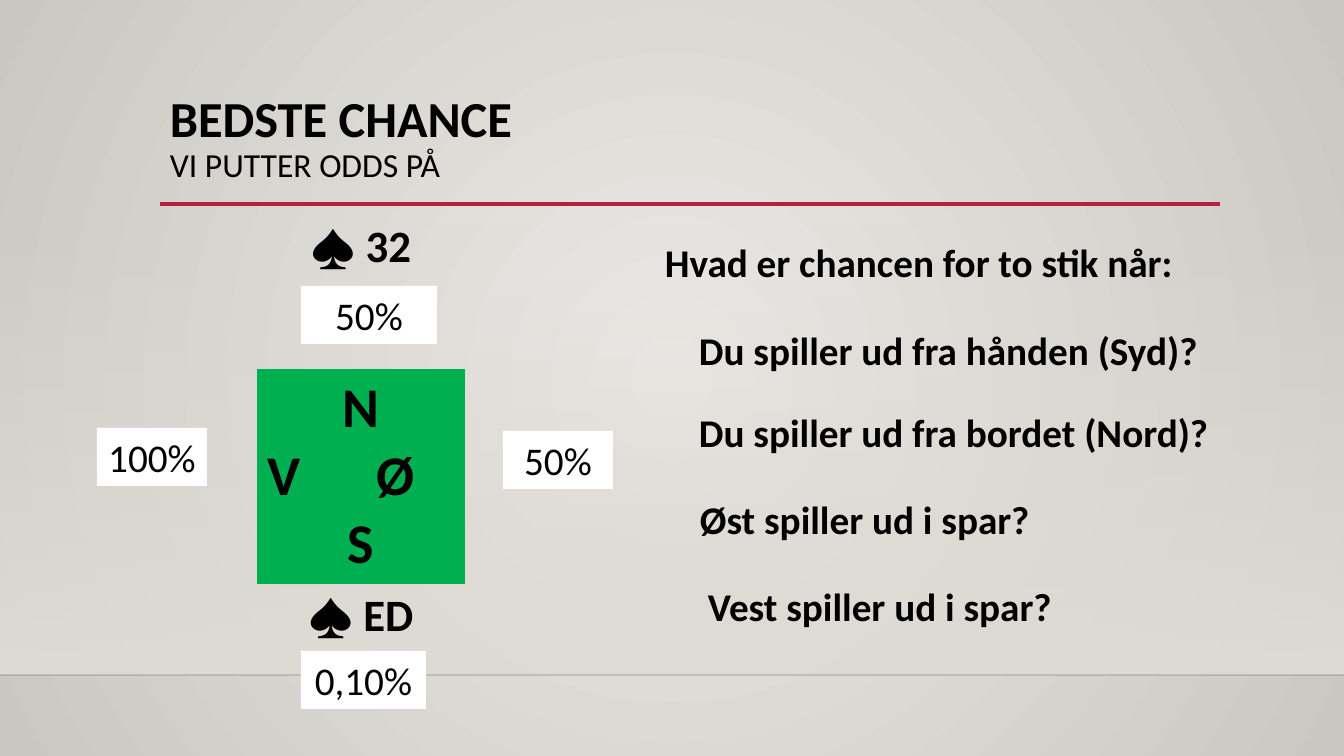
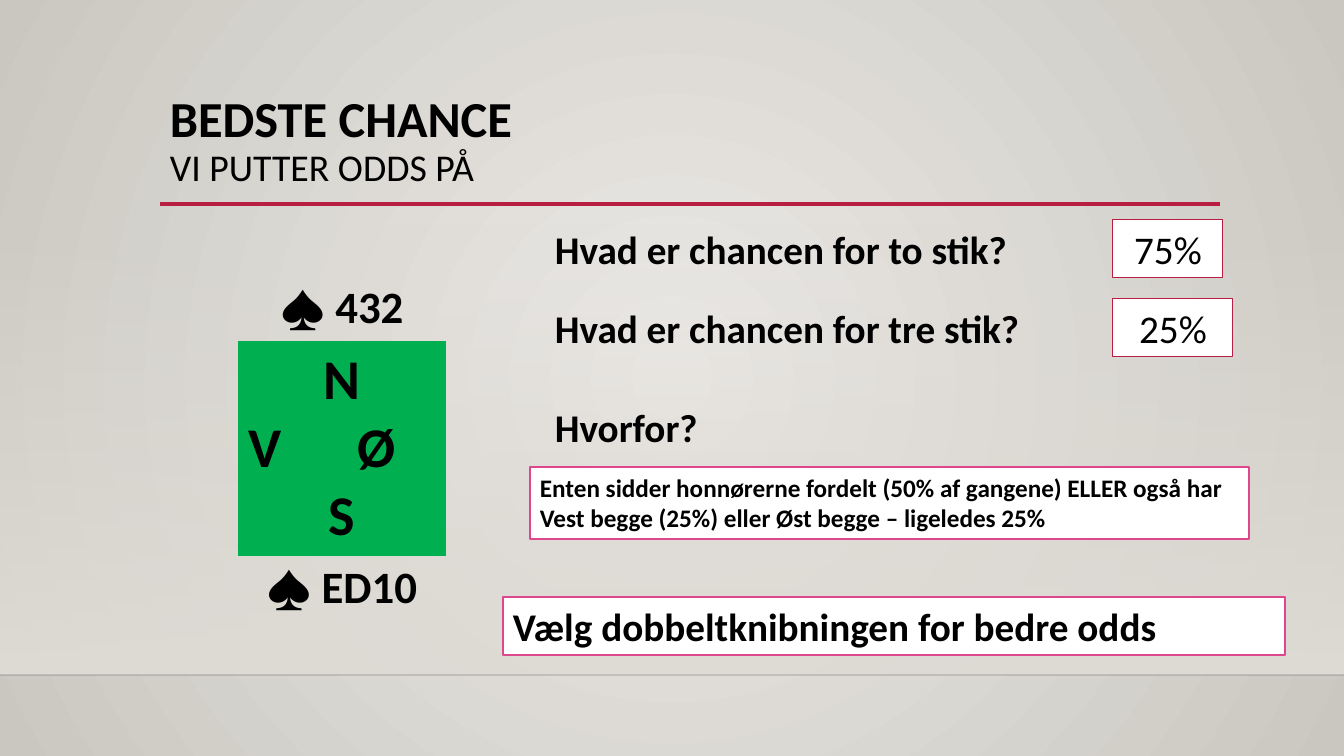
from dataclasses import dataclass
from typing import Optional

import pptx
import pptx.dml.color
import pptx.enum.shapes
import pptx.enum.text
import pptx.oxml
import pptx.oxml.ns
import pptx.util

PX = 914400 / 100.8  # EMU in one px
SLIDE_W, SLIDE_H = 1344, 756
BOX_H = 58
NO_STYLE_TABLE = "{2D5ABB26-0587-4C30-8999-92F81FD0307C}"

MSO = pptx.enum.shapes
ANCHOR = pptx.enum.text.MSO_ANCHOR
ALIGN = pptx.enum.text.PP_ALIGN
qn = pptx.oxml.ns.qn


@dataclass(frozen=True)
class Theme:
    font: str = "Calibri"
    ink: str = "000000"
    white: str = "FFFFFF"
    table_green: str = "00B050"
    red: str = "B71E42"
    pink: str = "DE478E"
    floor: str = "DFDBD5"
    floor_line: str = "000001"
    light: str = "ECEAE7"
    dark: str = "CAC7C1"
    title: int = 36
    body: int = 28
    note: int = 18
    seat: int = 40
    cards: int = 32


T = Theme()


@dataclass(frozen=True)
class Style:
    size: int = T.body
    bold: bool = True
    centred: bool = False
    fill: Optional[str] = None
    line: Optional[str] = None
    line_pt: float = 0.75


QUESTION = Style()
ANSWER = Style(bold=False, centred=True, fill=T.white)
FRAMED_ANSWER = Style(bold=False, centred=True, fill=T.white, line=T.red)
CONCLUSION = Style(fill=T.white, line=T.pink, line_pt=1.25)
EXPLANATION = Style(size=T.note, fill=T.white, line=T.pink, line_pt=1.25)


@dataclass(frozen=True)
class Box:
    text: str
    x: int
    y: int
    w: int
    style: Style
    h: int = BOX_H


@dataclass(frozen=True)
class Deal:
    north: str
    south: str
    x: int
    y: int
    north_h: int
    north_anchor: ANCHOR


@dataclass(frozen=True)
class Page:
    subtitle_size: int
    deal: Deal
    boxes: tuple[Box, ...]


PAGES = (
    Page(24, Deal("32", "ED", 46, 215, 154, ANCHOR.TOP), (
        Box("Hvad er chancen for to stik når:", 655, 233, 604, QUESTION),
        Box("Du spiller ud fra hånden (Syd)?", 689, 321, 604, QUESTION),
        Box("Du spiller ud fra bordet (Nord)?", 689, 403, 604, QUESTION),
        Box("Øst spiller ud i spar?", 690, 490, 568, QUESTION),
        Box("Vest spiller ud i spar?", 698, 577, 568, QUESTION),
        Box("0,10%", 301, 651, 125, ANSWER),
        Box("100%", 97, 428, 110, ANSWER),
        Box("50%", 503, 431, 110, ANSWER),
        Box("50%", 301, 286, 136, ANSWER),
    )),
    Page(27, Deal("432", "ED10", 27, 222, 119, ANCHOR.BOTTOM), (
        Box("Hvad er chancen for to stik?", 545, 220, 533, QUESTION),
        Box("Hvad er chancen for tre stik?", 545, 299, 547, QUESTION),
        Box("Hvorfor?", 545, 398, 199, QUESTION),
        Box("75%", 1113, 220, 110, FRAMED_ANSWER),
        Box("25%", 1113, 299, 120, FRAMED_ANSWER),
        Box("Enten sidder honnørerne fordelt (50% af gangene) ELLER også har "
            "Vest begge (25%) eller Øst begge – ligeledes 25%",
            530, 467, 719, EXPLANATION, 72),
        Box("Vælg dobbeltknibningen for bedre odds", 503, 597, 782, CONCLUSION),
    )),
)


def px(n: int) -> pptx.util.Emu:
    return pptx.util.Emu(round(n * PX))


def rgb(colour: str) -> pptx.dml.color.RGBColor:
    return pptx.dml.color.RGBColor.from_string(colour)


def add_run(p, text: str, size: int, bold: bool) -> None:
    r = p.add_run()
    r.text = text
    r.font.name = T.font
    r.font.size = pptx.util.Pt(size)
    r.font.bold = bold
    r.font.color.rgb = rgb(T.ink)


def set_alpha(colour_el, percent: int) -> None:
    alpha = pptx.oxml.parse_xml(
        f'<a:alpha {pptx.oxml.ns.nsdecls("a")} val="{percent * 1000}"/>')
    colour_el.append(alpha)


def set_stops(fill, first: str, last: str) -> None:
    fill.gradient()
    for stop, colour, position in zip(fill.gradient_stops, (first, last), (0, 1)):
        stop.color.rgb = rgb(colour)
        stop.position = position


def set_background(master) -> None:
    set_stops(master.background.fill, T.light, T.dark)
    grad = master.element.find(".//" + qn("a:gradFill"))
    for lin in grad.findall(qn("a:lin")):
        grad.remove(lin)
    grad.append(pptx.oxml.parse_xml(
        f'<a:path {pptx.oxml.ns.nsdecls("a")} path="circle">'
        '<a:fillToRect l="50000" t="50000" r="50000" b="50000"/></a:path>'))


def add_line(s, x1: int, x2: int, y: int, colour: str, width: float,
             alpha: int = 100) -> None:
    line = s.shapes.add_connector(MSO.MSO_CONNECTOR.STRAIGHT,
                                  px(x1), px(y), px(x2), px(y))
    line.line.color.rgb = rgb(colour)
    line.line.width = pptx.util.Pt(width)
    if alpha < 100:
        set_alpha(line.element.find(".//" + qn("a:srgbClr")), alpha)
    line.element.spPr.append(pptx.oxml.parse_xml(
        f'<a:effectLst {pptx.oxml.ns.nsdecls("a")}/>'))


def add_frame(s, subtitle_size: int) -> None:
    # Floor band fading in towards its line
    sp = s.shapes.add_shape(MSO.MSO_SHAPE.RECTANGLE,
                            px(0), px(223), px(SLIDE_W), px(452))
    sp.shadow.inherit = False
    sp.line.fill.background()
    set_stops(sp.fill, T.floor, T.floor)
    sp.fill.gradient_angle = 270
    set_alpha(sp.element.find(".//" + qn("a:srgbClr")), 0)
    add_line(s, 0, SLIDE_W, 675, T.floor_line, 1, alpha=20)
    add_line(s, 160, 1220, 204, T.red, 2.5)

    # Title and subtitle
    tf = s.shapes.add_textbox(px(160), px(89), px(1058), px(116)).text_frame
    tf.word_wrap = True
    p = tf.paragraphs[0]
    p.line_spacing = 0.9
    add_run(p, "BEDSTE CHANCE", T.title, True)
    p.add_line_break()
    add_run(p, "VI PUTTER ODDS PÅ", subtitle_size, False)


def add_cards(cell, cards: str) -> None:
    p = cell.text_frame.paragraphs[0]
    p.alignment = ALIGN.CENTER
    add_run(p, "♠ ", T.cards, False)
    add_run(p, cards, T.cards, True)


def add_deal(s, deal: Deal) -> None:
    widths, heights = (211, 208, 254), (deal.north_h, 215, 115)
    table = s.shapes.add_table(3, 3, px(deal.x), px(deal.y),
                               px(sum(widths)), px(sum(heights))).table
    table.first_row = table.horz_banding = False
    table._tbl.tblPr.find(qn("a:tableStyleId")).text = NO_STYLE_TABLE
    for column, width in zip(table.columns, widths):
        column.width = px(width)
    for row, height in zip(table.rows, heights):
        row.height = px(height)
    for cell in table.iter_cells():
        cell.fill.background()

    # Hands of North and South
    north, seats, south = (table.cell(row, 1) for row in range(3))
    north.vertical_anchor = deal.north_anchor
    add_cards(north, deal.north)
    add_cards(south, deal.south)

    # Green card table with the four seats
    seats.fill.solid()
    seats.fill.fore_color.rgb = rgb(T.table_green)
    tf = seats.text_frame
    for i, text in enumerate(("N", "V\tØ", "S")):
        p = tf.add_paragraph() if i else tf.paragraphs[0]
        if "\t" in text:
            p._p.get_or_add_pPr().append(pptx.oxml.parse_xml(
                f'<a:tabLst {pptx.oxml.ns.nsdecls("a")}>'
                f'<a:tab pos="{px(109)}" algn="l"/></a:tabLst>'))
        else:
            p.alignment = ALIGN.CENTER
        add_run(p, text, T.seat, True)


def add_box(s, box: Box) -> None:
    style = box.style
    place = px(box.x), px(box.y), px(box.w), px(box.h)
    if style.fill:
        sp = s.shapes.add_shape(MSO.MSO_SHAPE.RECTANGLE, *place)
        sp.shadow.inherit = False
        sp.fill.solid()
        sp.fill.fore_color.rgb = rgb(style.fill)
        if style.line:
            sp.line.color.rgb = rgb(style.line)
            sp.line.width = pptx.util.Pt(style.line_pt)
        else:
            sp.line.fill.background()
    else:
        sp = s.shapes.add_textbox(*place)
    tf = sp.text_frame
    tf.word_wrap = True
    tf.vertical_anchor = ANCHOR.TOP
    p = tf.paragraphs[0]
    p.alignment = ALIGN.CENTER if style.centred else ALIGN.LEFT
    add_run(p, box.text, style.size, style.bold)


def main() -> None:
    prs = pptx.Presentation()
    prs.slide_width, prs.slide_height = px(SLIDE_W), px(SLIDE_H)
    set_background(prs.slide_master)
    for page in PAGES:
        s = prs.slides.add_slide(prs.slide_layouts[6])
        add_frame(s, page.subtitle_size)
        add_deal(s, page.deal)
        for box in page.boxes:
            add_box(s, box)
    prs.save("out.pptx")


if __name__ == "__main__":
    main()
